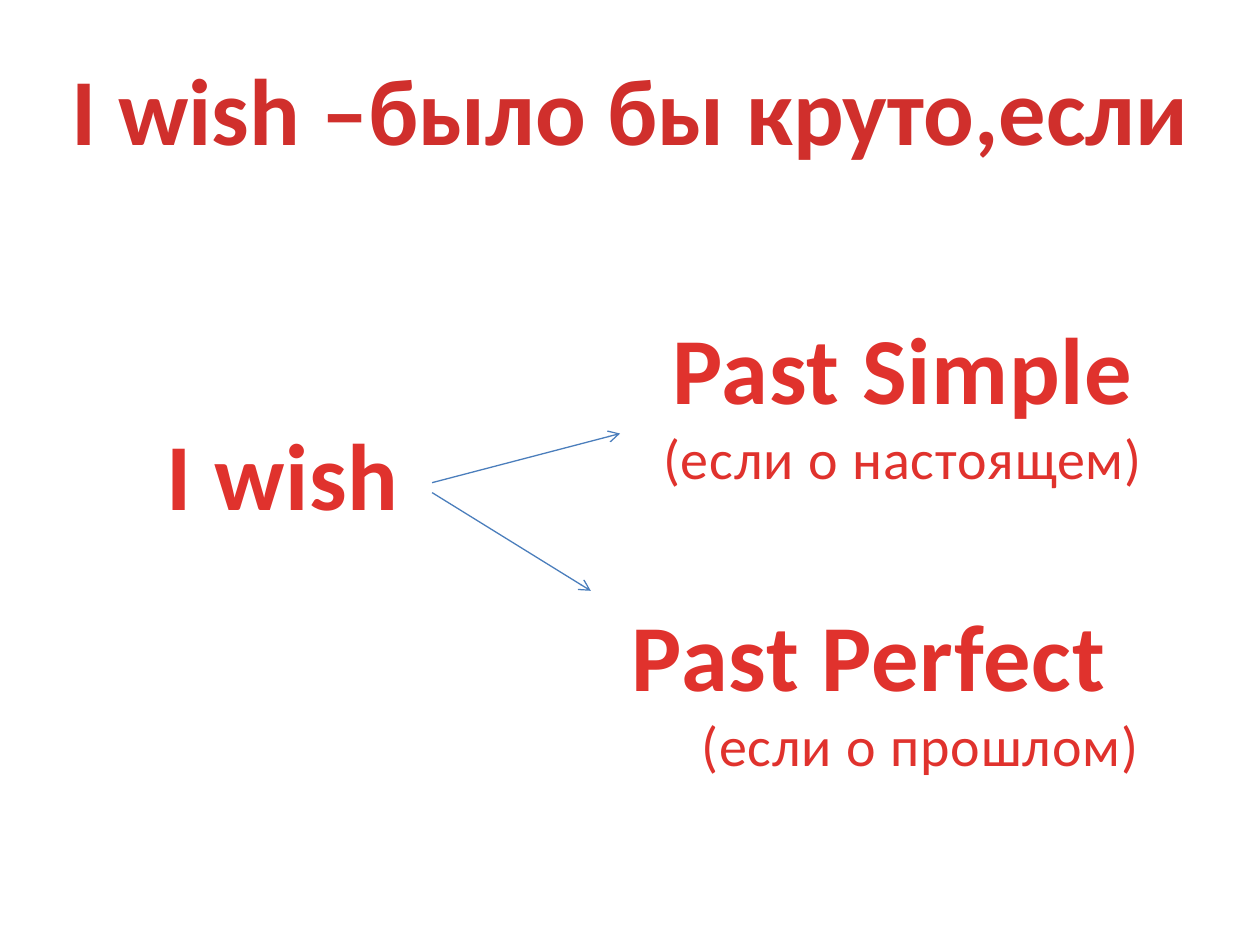
from dataclasses import dataclass
from typing import Optional

from lxml.etree import SubElement
from pptx import Presentation
from pptx.dml.color import RGBColor
from pptx.enum.shapes import MSO_CONNECTOR
from pptx.enum.text import MSO_ANCHOR, MSO_AUTO_SIZE, PP_ALIGN
from pptx.oxml.ns import qn
from pptx.util import Cm, Pt

COLORS = {"title": "D02F2C", "label": "E0322D", "arrow": "4B7EBC"}
FONT = "Calibri"


@dataclass
class Line:
    text: str
    size: int = 54
    bold: bool = True
    indent: Optional[float] = None


@dataclass
class Label:
    left: float
    top: float
    width: float
    height: float
    lines: list[Line]


@dataclass
class Arrow:
    start: tuple[float, float]
    end: tuple[float, float]


TITLE = Label(1.07, 0.91, 23.27, 2.57, [Line("I wish –было бы круто,если")])
LABELS = [
    Label(3.1, 8.26, 12.47, 2.57, [Line("I wish", indent=0)]),
    Label(12.5, 6.12, 11.4, 3.94,
          [Line("Past Simple"), Line("(если о настоящем)", 32, False)]),
    Label(12.29, 11.91, 12.6, 3.94,
          [Line("Past Perfect", indent=0.2),
           Line("(если о прошлом)", 32, False, indent=1.6)]),
]
ARROWS = [
    Arrow((8.71, 9.93), (11.91, 11.91)),
    Arrow((8.71, 9.73), (12.5, 8.74)),
]


def fill_box(box, label: Label, color: str, spacing: int = 0) -> None:
    box.left, box.top = Cm(label.left), Cm(label.top)
    box.width, box.height = Cm(label.width), Cm(label.height)
    frame = box.text_frame
    frame.text = "\n".join(line.text for line in label.lines)
    frame.word_wrap = True
    frame.auto_size = MSO_AUTO_SIZE.NONE
    frame.vertical_anchor = MSO_ANCHOR.TOP
    for para, line in zip(frame.paragraphs, label.lines):
        if line.indent is None:
            para.alignment = PP_ALIGN.CENTER
        else:
            para.alignment = PP_ALIGN.LEFT
            para._p.get_or_add_pPr().set("marL", str(Cm(line.indent)))
        span = para.runs[0]
        span.font.name = FONT
        span.font.size = Pt(line.size)
        span.font.bold = line.bold
        span.font.color.rgb = RGBColor.from_string(COLORS[color])
        if spacing:
            span._r.get_or_add_rPr().set("spc", str(spacing))


def draw_arrow(page, arrow: Arrow) -> None:
    ends = [Cm(value) for value in (*arrow.start, *arrow.end)]
    connector = page.shapes.add_connector(MSO_CONNECTOR.STRAIGHT, *ends)
    connector.line.color.rgb = RGBColor.from_string(COLORS["arrow"])
    connector.line.width = Pt(0.75)
    SubElement(connector.line._get_or_add_ln(), qn("a:tailEnd"), type="arrow")
    SubElement(connector._element.spPr, qn("a:effectLst"))


def main() -> None:
    deck = Presentation()
    deck.slide_width, deck.slide_height = Cm(25.4), Cm(19.05)
    page = deck.slides.add_slide(deck.slide_layouts[5])
    fill_box(page.shapes.title, TITLE, "title")
    for label in LABELS:
        box = page.shapes.add_textbox(0, 0, 0, 0)
        fill_box(box, label, "label", spacing=50)
    for arrow in ARROWS:
        draw_arrow(page, arrow)
    deck.save("out.pptx")


if __name__ == "__main__":
    main()
